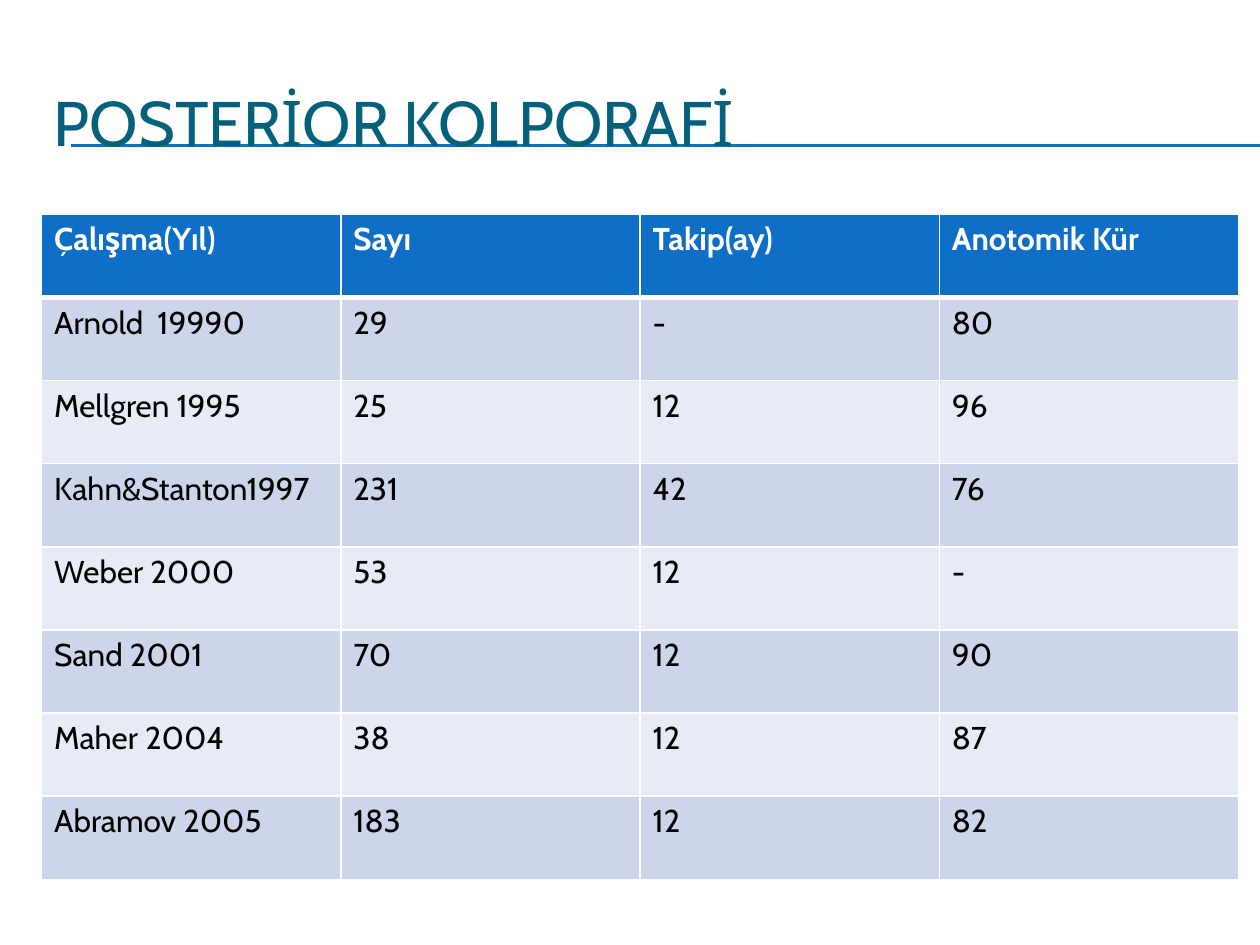
from lxml import etree
from pptx import Presentation
from pptx import util as u
from pptx.dml.color import RGBColor
from pptx.enum import shapes, text
from pptx.oxml.ns import qn

WIDTH, HEIGHT = u.Inches(10), u.Inches(7.5)
LEFT, CONTENT_WIDTH = u.Inches(0.33), u.Inches(9.5)
ROW_HEIGHT = u.Inches(0.66)
FONT = "Cabin"
COLORS = {
    "title": "04617B",
    "accent": "0F6FC6",
    "odd": "CCD5EA",
    "even": "E7EBF5",
    "white": "FFFFFF",
    "black": "000000",
}
STUDIES = [
    ("Çalışma(Yıl)", "Sayı", "Takip(ay)", "Anotomik Kür"),
    ("Arnold  19990", "29", "-", "80"),
    ("Mellgren 1995", "25", "12", "96"),
    ("Kahn&Stanton1997", "231", "42", "76"),
    ("Weber 2000", "53", "12", "-"),
    ("Sand 2001", "70", "12", "90"),
    ("Maher 2004", "38", "12", "87"),
    ("Abramov 2005", "183", "12", "82"),
]


def color(name):
    """Return the named palette colour."""
    return RGBColor.from_string(COLORS[name])


def style_para(para, size, color_name, bold=False):
    """Set the font of a whole paragraph."""
    font = para.font
    font.name, font.size, font.bold = FONT, u.Pt(size), bold
    font.color.rgb = color(color_name)


def add_rule(page, top):
    """Draw a thin line from the title's edge to the slide's right side."""
    rule = page.shapes.add_connector(
        shapes.MSO_CONNECTOR.STRAIGHT, u.Inches(0.56), top, WIDTH, top)
    rule.line.color.rgb = color("accent")
    rule.line.width = u.Pt(0.75)
    etree.SubElement(rule._element.spPr, qn("a:effectLst"))


def add_title(page, words):
    """Add the slide's title in a text box."""
    box = page.shapes.add_textbox(LEFT, u.Inches(0.5), CONTENT_WIDTH, u.Inches(0.92))
    frame = box.text_frame
    frame.word_wrap = True
    frame.vertical_anchor = text.MSO_ANCHOR.MIDDLE
    frame.text = words
    style_para(frame.paragraphs[0], 36, "title")


def add_borders(cell, top, bottom):
    """Give a cell white borders with the given top and bottom widths."""
    properties = cell._tc.get_or_add_tcPr()
    for side, points in zip("LRTB", (1, 1, top, bottom)):
        line = etree.SubElement(properties, qn(f"a:ln{side}"), w=str(u.Pt(points)))
        fill = etree.SubElement(line, qn("a:solidFill"))
        etree.SubElement(fill, qn("a:srgbClr"), val=COLORS["white"])


def fill_cell(cell, words, row):
    """Write and style one cell according to its row."""
    header = row == 0
    cell.text = words
    cell.margin_left = cell.margin_right = u.Inches(0.1)
    style_para(cell.text_frame.paragraphs[0], 18, "white" if header else "black", header)
    add_borders(cell, 3 if row == 1 else 1, 3 if header else 1)
    cell.fill.solid()
    cell.fill.fore_color.rgb = color("accent" if header else "odd" if row % 2 else "even")


def add_study_table(page, rows):
    """Add the table of studies on an even grid."""
    table = page.shapes.add_table(
        len(rows), len(rows[0]), LEFT, u.Inches(1.7),
        CONTENT_WIDTH, ROW_HEIGHT * len(rows)).table
    for row, values in enumerate(rows):
        table.rows[row].height = ROW_HEIGHT
        for column, words in enumerate(values):
            fill_cell(table.cell(row, column), words, row)


def main():
    """Build and save the slide."""
    deck = Presentation()
    deck.slide_width, deck.slide_height = WIDTH, HEIGHT
    page = deck.slides.add_slide(deck.slide_layouts[6])
    for top in (1.15, 1.16):
        add_rule(page, u.Inches(top))
    add_title(page, "POSTERİOR KOLPORAFİ")
    add_study_table(page, STUDIES)
    deck.save("out.pptx")


if __name__ == "__main__":
    main()
